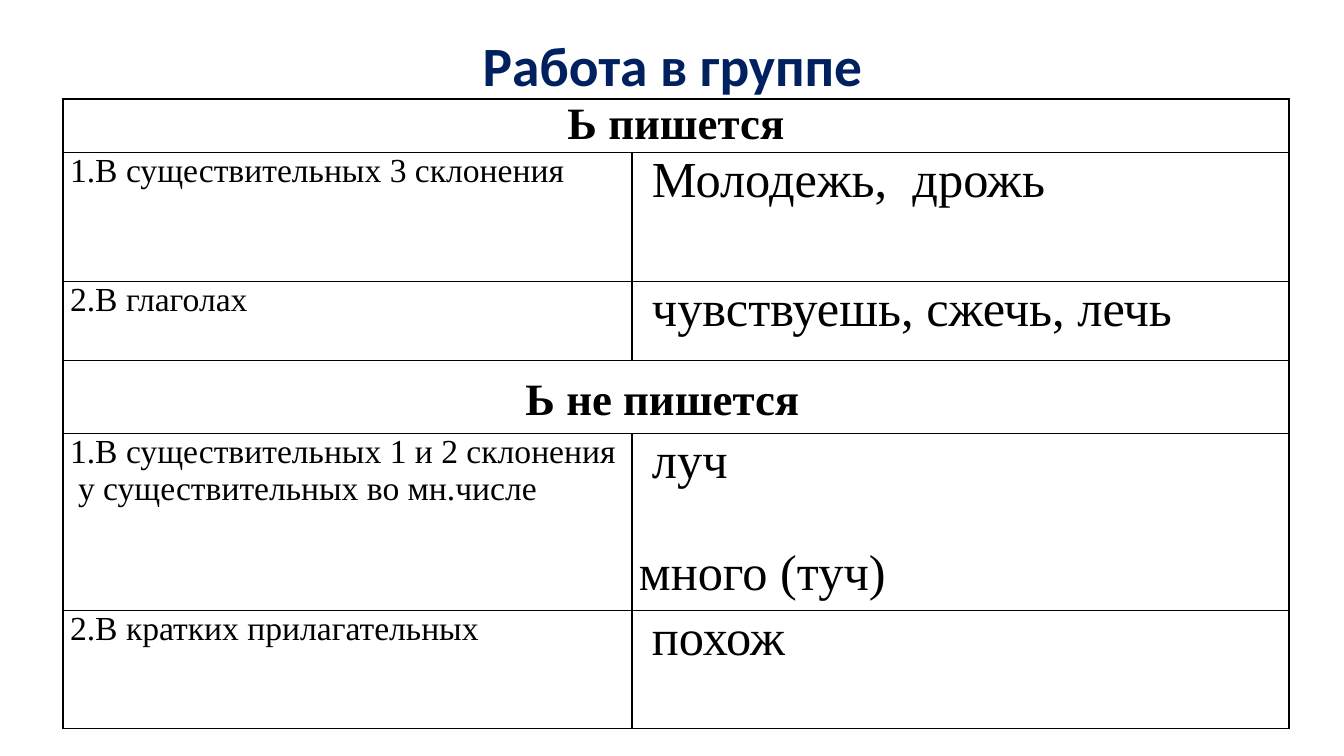
from dataclasses import dataclass

from lxml.etree import SubElement
from pptx import Presentation
from pptx.dml.color import RGBColor
from pptx.enum.text import MSO_ANCHOR as Anchor, PP_ALIGN as Align
from pptx.oxml.ns import qn
from pptx.util import Emu, Pt


@dataclass(frozen=True)
class Theme:
    ink: str = "000000"
    navy: str = "002060"
    paper: str = "FFFFFF"
    title_font: str = "Calibri"
    body_font: str = "Times New Roman"
    title_size: float = 39.6
    heading_size: int = 32
    rule_size: int = 24
    example_size: int = 36
    border: int = 1


class SlideBuilder:
    """Draws text and tables on one page in a shared theme, with lengths in px."""

    def __init__(self, deck, theme):
        self.theme = theme
        self.page = deck.slides.add_slide(deck.slide_layouts[6])

    @staticmethod
    def px(length):
        return Emu(round(length * 914400 / 100.8))

    def set_text(self, para, text, size, font, color, bold=False, indent=0, **layout):
        span = para.add_run()
        span.text = text
        for name, value in dict(size=Pt(size), name=font, bold=bold).items():
            setattr(span.font, name, value)
        span.font.color.rgb = RGBColor.from_string(color)
        para._p.get_or_add_pPr().set("marL", str(self.px(indent)))
        for name, value in layout.items():
            setattr(para, name, value)

    def title(self, text, left, top, width, height):
        box = self.page.shapes.add_textbox(*map(self.px, (left, top, width, height)))
        frame = box.text_frame
        settings = dict(word_wrap=True, vertical_anchor=Anchor.MIDDLE,
                        margin_top=0, margin_bottom=0)
        for name, value in settings.items():
            setattr(frame, name, value)
        theme = self.theme
        self.set_text(frame.paragraphs[0], text, theme.title_size, theme.title_font,
                      theme.navy, bold=True, alignment=Align.CENTER, line_spacing=0.9)

    def table(self, left, top, widths, heights):
        bounds = (left, top, sum(widths), sum(heights))
        frame = self.page.shapes.add_table(len(heights), len(widths), *map(self.px, bounds))
        grid = frame.table
        grid.first_row = grid.horz_banding = False
        for column, width in zip(grid.columns, widths):
            column.width = self.px(width)
        for row, height in zip(grid.rows, heights):
            row.height = self.px(height)
        for cell in grid.iter_cells():
            self.style_cell(cell)
        return grid

    def style_cell(self, cell):
        margins = dict(margin_left=7, margin_right=7, margin_top=0, margin_bottom=0)
        for name, value in margins.items():
            setattr(cell, name, self.px(value))
        properties = cell._tc.get_or_add_tcPr()
        for side in ("lnL", "lnR", "lnT", "lnB"):
            line = SubElement(properties, qn(f"a:{side}"), w=str(Pt(self.theme.border)))
            fill = SubElement(line, qn("a:solidFill"))
            SubElement(fill, qn("a:srgbClr"), val=self.theme.ink)
        cell.fill.solid()
        cell.fill.fore_color.rgb = RGBColor.from_string(self.theme.paper)

    def fill_cell(self, cell, lines, size, bold=False, align=Align.LEFT):
        frame = cell.text_frame
        for index, (text, indent, gap) in enumerate(lines):
            para = frame.add_paragraph() if index else frame.paragraphs[0]
            self.set_text(para, text, size, self.theme.body_font, self.theme.ink, bold,
                          indent, alignment=align, space_before=Pt(gap))

    def heading(self, grid, row, text, **margins):
        cell = grid.cell(row, 0)
        cell.merge(grid.cell(row, 1))
        for name, value in margins.items():
            setattr(cell, name, self.px(value))
        self.fill_cell(cell, [(text, 0, 0)], self.theme.heading_size, True, Align.CENTER)


def main():
    deck = Presentation()
    deck.slide_width, deck.slide_height = map(SlideBuilder.px, (1344, 756))
    theme = Theme()
    builder = SlideBuilder(deck, theme)
    builder.title("Работа в группе", 93, 40, 1159, 58)
    grid = builder.table(63, 99, (569, 657), (52, 129, 79, 73, 177, 118))
    builder.heading(grid, 0, "Ь пишется")
    builder.heading(grid, 3, "Ь не пишется", margin_top=15, margin_right=34)
    rules = {
        1: ([("1.В существительных 3 склонения", 0, 0)],
            [("Молодежь,  дрожь", 13, 0)]),
        2: ([("2.В глаголах", 0, 0)],
            [("чувствуешь, сжечь, лечь", 13, 0)]),
        4: ([("1.В существительных 1 и 2 склонения", 0, 0),
             ("у существительных во мн.числе", 8, 0)],
            [("луч", 13, 0), ("много (туч)", 0, 40)]),
        5: ([("2.В кратких прилагательных", 0, 0)],
            [("похож", 13, 0)]),
    }
    for row, (rule, examples) in rules.items():
        builder.fill_cell(grid.cell(row, 0), rule, theme.rule_size)
        builder.fill_cell(grid.cell(row, 1), examples, theme.example_size)
    deck.save("out.pptx")


if __name__ == "__main__":
    main()
